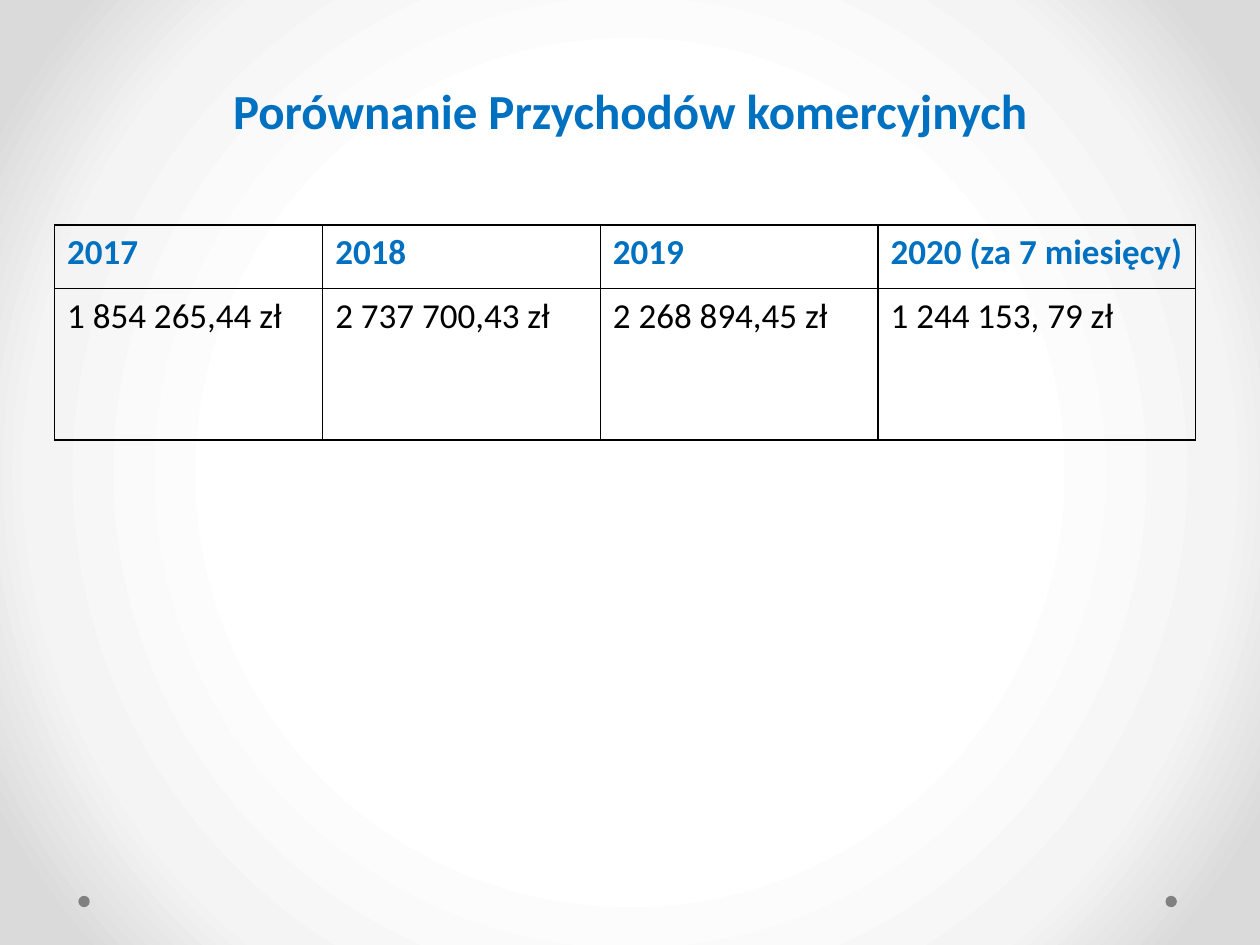
import pptx
import pptx.dml.color
import pptx.enum.shapes
import pptx.enum.text
import pptx.oxml
import pptx.oxml.ns
import pptx.util
from dataclasses import dataclass

Pt = pptx.util.Pt
HUES = {"blue": "0070C0", "black": "000000", "dot": "808080",
        "mid": "FFFFFF", "ring": "F4F4F4", "edge": "DADADA"}
FONT = "Calibri"


@dataclass
class Year:
    name: str
    sum: str
    width: float


YEARS = [
    Year("2017", "1 854 265,44 zł", 153.2),
    Year("2018", "2 737 700,43 zł", 158.7),
    Year("2019", "2 268 894,45 zł", 158.7),
    Year("2020 (za 7 miesięcy)", "1 244 153, 79 zł", 181.5),
]
ROWS = [36.3, 86.4]


def hue(name: str) -> pptx.dml.color.RGBColor:
    return pptx.dml.color.RGBColor.from_string(HUES[name])


def node(body: str):
    space = pptx.oxml.ns.nsdecls("a")
    head, tail = body.split(">", 1)
    return pptx.oxml.parse_xml(f"{head} {space}>{tail}")


def add_run(frame, text: str, size: float, tint: str, bold: bool) -> None:
    run = frame.paragraphs[0].add_run()
    run.text = text
    run.font.name = FONT
    run.font.size = Pt(size)
    run.font.bold = bold
    run.font.color.rgb = hue(tint)


def paint_back(slide) -> None:
    slide.background.fill.gradient()
    old = next(slide.element.iter(pptx.oxml.ns.qn("a:gradFill")))
    stops = "".join(
        f'<a:gs pos="{pos * 1000}"><a:srgbClr val="{HUES[tint]}"/></a:gs>'
        for pos, tint in [(50, "mid"), (76, "ring"), (92, "edge")])
    new = node(
        f'<a:gradFill rotWithShape="1"><a:gsLst>{stops}</a:gsLst>'
        '<a:path path="circle"><a:fillToRect l="50000" t="50000" '
        'r="50000" b="50000"/></a:path></a:gradFill>')
    old.getparent().replace(old, new)


def add_dot(slide, left: float) -> None:
    kind = pptx.enum.shapes.MSO_SHAPE.OVAL
    dot = slide.shapes.add_shape(kind, Pt(left), Pt(511.9), Pt(6.5), Pt(6.5))
    dot.shadow.inherit = False
    dot.fill.solid()
    dot.fill.fore_color.rgb = hue("dot")
    dot.line.fill.background()


def add_title(slide, text: str) -> None:
    title = slide.shapes.title
    title.left, title.top = Pt(36), Pt(0)
    title.width, title.height = Pt(648), Pt(126)
    frame = title.text_frame
    frame.vertical_anchor = pptx.enum.text.MSO_ANCHOR.MIDDLE
    frame.paragraphs[0].alignment = pptx.enum.text.PP_ALIGN.CENTER
    add_run(frame, text, 28, "blue", True)


def fill_cell(cell, text: str, tint: str, bold: bool) -> None:
    props = cell._tc.get_or_add_tcPr()
    for side in "LRTB":
        props.append(node(
            f'<a:ln{side} w="{Pt(1)}"><a:solidFill>'
            f'<a:srgbClr val="{HUES["black"]}"/></a:solidFill></a:ln{side}>'))
    cell.fill.background()
    add_run(cell.text_frame, text, 20, tint, bold)


def add_grid(slide) -> None:
    width = sum(year.width for year in YEARS)
    grid = slide.shapes.add_table(
        len(ROWS), len(YEARS), Pt(31.2), Pt(128.6),
        Pt(width), Pt(sum(ROWS))).table
    grid.first_row = grid.horz_banding = False
    for row, height in zip(grid.rows, ROWS):
        row.height = Pt(height)
    for col, year in enumerate(YEARS):
        grid.columns[col].width = Pt(year.width)
        fill_cell(grid.cell(0, col), year.name, "blue", True)
        fill_cell(grid.cell(1, col), year.sum, "black", False)


def main() -> None:
    deck = pptx.Presentation()
    deck.slide_width, deck.slide_height = Pt(720), Pt(540)
    slide = deck.slides.add_slide(deck.slide_layouts[5])
    paint_back(slide)
    for left in (666, 44.8):
        add_dot(slide, left)
    add_title(slide, "Porównanie Przychodów komercyjnych")
    add_grid(slide)
    deck.save("out.pptx")


if __name__ == "__main__":
    main()
